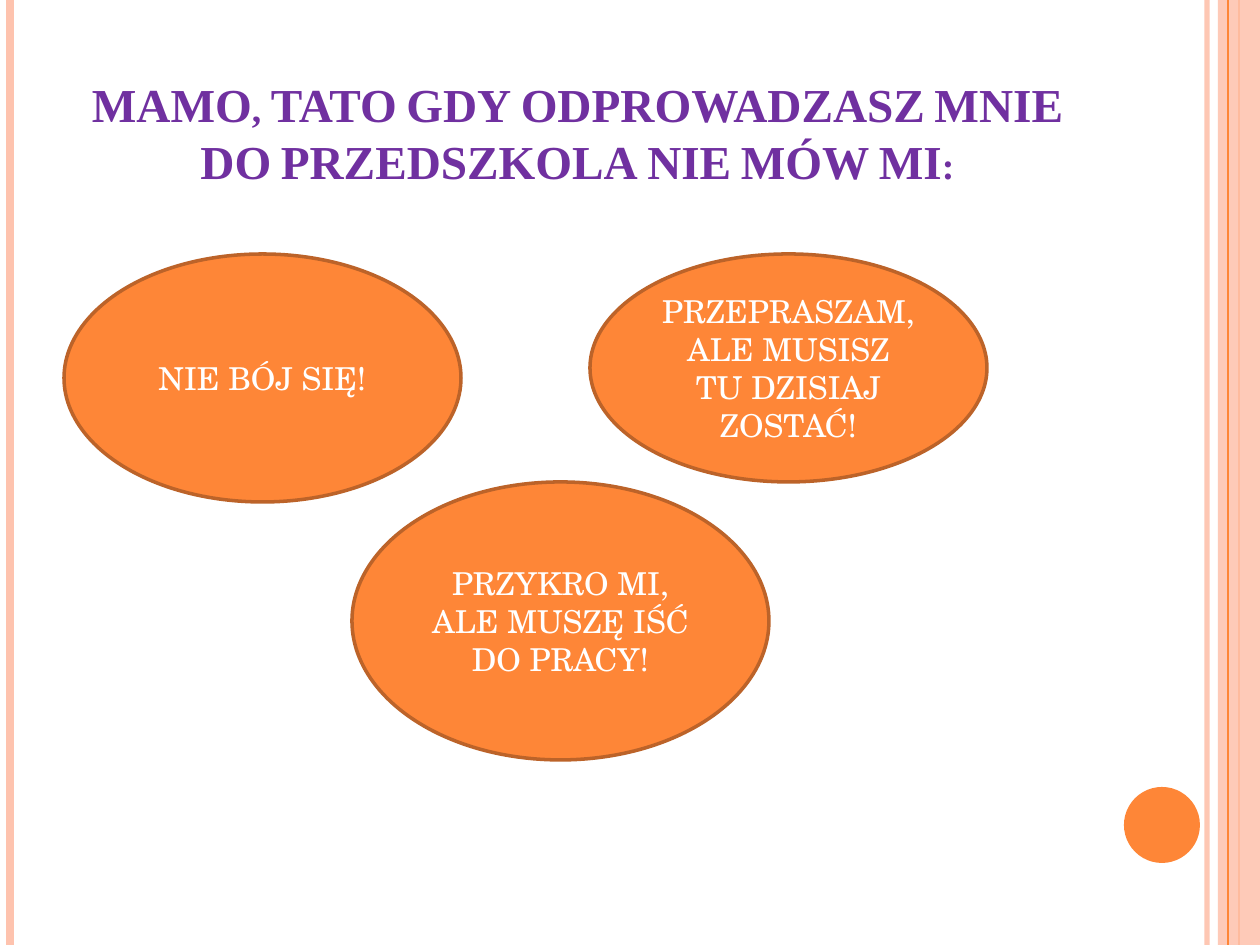
from lxml import etree
from pptx import Presentation, util as u
from pptx.dml.color import RGBColor
from pptx.enum import shapes as s, text as t
from pptx.oxml.ns import qn

PX = 914400 // 126
ORANGE, PEACH, BROWN = "FE8637", "FEC3AE", "BC6329"
WHITE, PURPLE = "FFFFFF", "7030A0"
WIDTH, HEIGHT = 1260, 945


def px(*nums):
    return [n * PX for n in nums]


def paint(color, code):
    color.rgb = RGBColor.from_string(code)


def fade(fill, share):
    node = next(fill.iter(qn("a:srgbClr")))
    etree.SubElement(node, qn("a:alpha"), val=str(share * 1000))


def add_stripe(slide, x, code, points, share=100):
    line = slide.shapes.add_connector(s.MSO_CONNECTOR.STRAIGHT, *px(x, 0, x, HEIGHT))
    paint(line.line.color, code)
    line.line.width = u.Pt(points)
    props = line._element.spPr
    if share < 100:
        fade(props, share)
    etree.SubElement(props, qn("a:effectLst"))


def add_form(slide, kind, box, code, edge=None):
    form = slide.shapes.add_shape(kind, *px(*box))
    form.shadow.inherit = False
    form.fill.solid()
    paint(form.fill.fore_color, code)
    if edge:
        paint(form.line.color, edge)
        form.line.width = u.Pt(2)
    else:
        form.line.fill.background()
    return form


def write(shape, words, font, size, code, anchor):
    frame = shape.text_frame
    frame.word_wrap = True
    frame.vertical_anchor = anchor
    para = frame.paragraphs[0]
    para.text = words
    para.alignment = t.PP_ALIGN.CENTER
    para.font.name = font
    para.font.size = u.Pt(size)
    paint(para.font.color, code)
    return para


def add_title(slide, words):
    box = slide.shapes.add_textbox(*px(63, 38, 1029, 157))
    para = write(box, words, "Times New Roman", 27, PURPLE, t.MSO_ANCHOR.BOTTOM)
    para.font.bold = True
    para.runs[0]._r.get_or_add_rPr().set("cap", "small")


def add_bubble(slide, box, words):
    form = add_form(slide, s.MSO_SHAPE.OVAL, box, ORANGE, BROWN)
    write(form, words, "TeX Gyre Schola", 18, WHITE, t.MSO_ANCHOR.MIDDLE)


def add_frame(slide):
    add_stripe(slide, 1207, PEACH, 3, 93)
    add_stripe(slide, 10, PEACH, 4.5)
    add_stripe(slide, 1239, ORANGE, 1.5)
    band = add_form(slide, s.MSO_SHAPE.RECTANGLE, (1218, 0, 42, HEIGHT), PEACH)
    fade(band._element.spPr, 87)
    add_stripe(slide, 1228, ORANGE, 0.75)
    add_form(slide, s.MSO_SHAPE.OVAL, (1124, 787, 76, 76), ORANGE)


def main():
    deck = Presentation()
    deck.slide_width, deck.slide_height = px(WIDTH, HEIGHT)
    slide = deck.slides.add_slide(deck.slide_layouts[6])
    add_frame(slide)
    add_title(slide, "MAMO, TATO GDY ODPROWADZASZ MNIE DO PRZEDSZKOLA NIE MÓW MI:")
    add_bubble(slide, (64, 254, 397, 248), "NIE BÓJ SIĘ!")
    add_bubble(slide, (590, 254, 397, 228), "PRZEPRASZAM,ALE MUSISZ TU DZISIAJ ZOSTAĆ!")
    add_bubble(slide, (352, 482, 417, 278), "PRZYKRO MI, ALE MUSZĘ IŚĆ DO PRACY!")
    deck.save("out.pptx")


if __name__ == "__main__":
    main()
